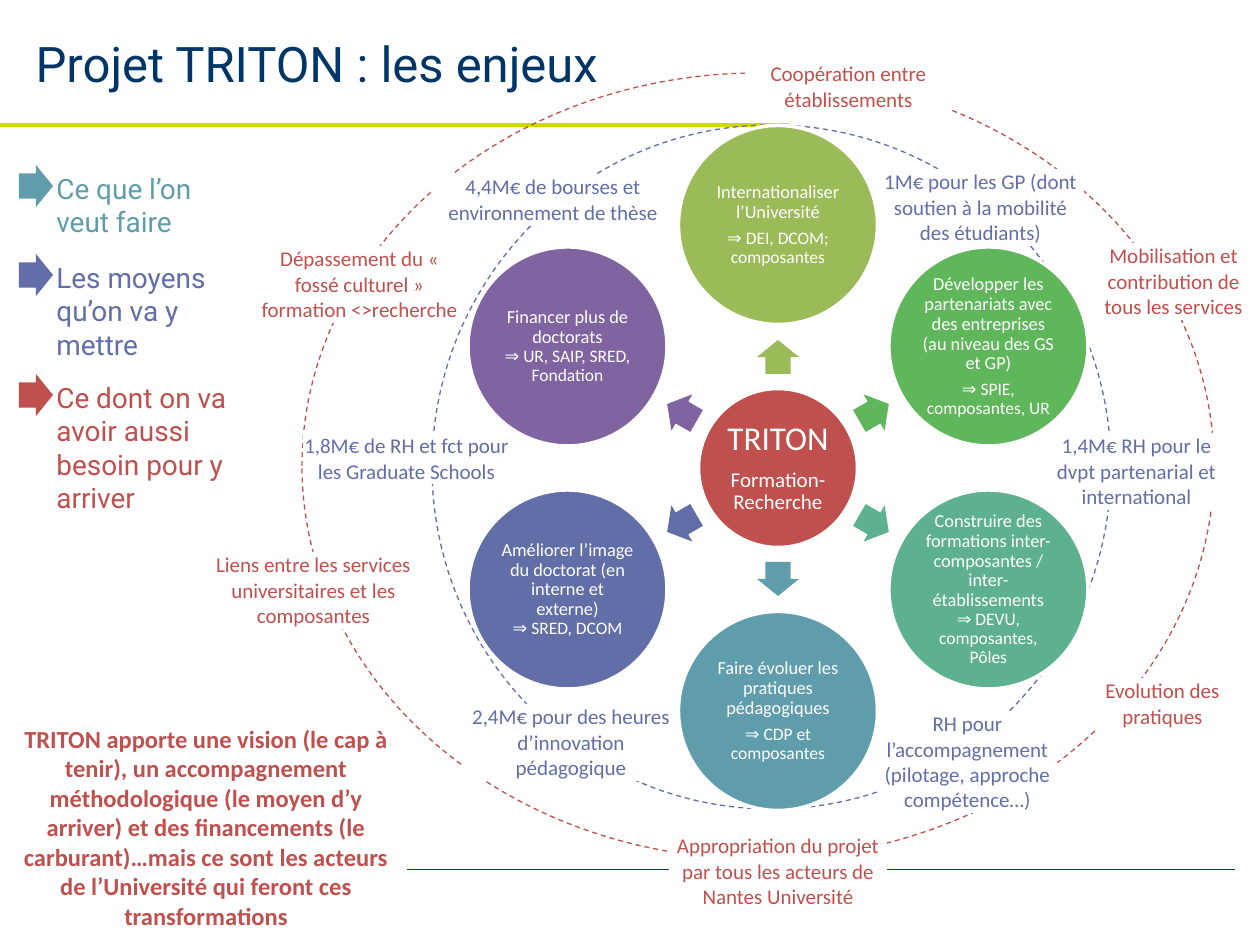
import math
import pptx
import pptx.util
import pptx.dml.color
import pptx.enum.dml
import pptx.enum.shapes
import pptx.enum.text
import pptx.oxml.ns
import pptx.oxml.xmlchemy

SHAPE = pptx.enum.shapes.MSO_SHAPE
ALIGN = pptx.enum.text.PP_ALIGN
ANCHOR = pptx.enum.text.MSO_ANCHOR

THEME = {
    "navy": "003667", "lime": "D0D700", "rule": "004080", "white": "FFFFFF",
    "teal": "5F9DAC", "blue": "626EA7", "red": "C0504D", "olive": "9BBB59",
    "green": "5FB65B", "mint": "5DB18E", "purple": "8064A2",
    "head": "Roboto", "body": "Calibri",
    "title": 28, "legend": 16, "message": 14, "label": 12,
    "hub": 19, "goal": 10.5, "owner": 10,
}

TITLE = "Projet TRITON : les enjeux"
LEGEND = [
    ("Ce que l’on veut faire", "teal", 165, 81),
    ("Les moyens qu’on va y mettre", "blue", 254, 115),
    ("Ce dont on va avoir aussi besoin pour y arriver", "red", 374, 149),
]
MESSAGE = ("TRITON apporte une vision (le cap à tenir), un accompagnement méthodologique "
           "(le moyen d’y arriver) et des financements (le carburant)…mais ce sont les acteurs "
           "de l’Université qui feront ces transformations")
HUB = ["TRITON", "Formation-Recherche"]
GOALS = [
    (["Internationaliser l’Université", "⇒ DEI, DCOM; composantes"], "olive"),
    (["Développer les partenariats avec des entreprises (au niveau des GS et GP)",
      "⇒ SPIE, composantes, UR"], "green"),
    (["Construire des formations inter-composantes / inter-établissements\v"
      "⇒ DEVU, composantes, Pôles"], "mint"),
    (["Faire évoluer les pratiques pédagogiques", "⇒ CDP et composantes"], "teal"),
    (["Améliorer l’image du doctorat (en interne et externe)\v⇒ SRED, DCOM"], "blue"),
    (["Financer plus de doctorats\v⇒ UR, SAIP, SRED, Fondation"], "purple"),
]
NEEDS = [
    ("Mobilisation et contribution de tous les services", 1096, 243, 155, 77),
    ("Appropriation du projet par tous les acteurs de Nantes Université", 669, 833, 218, 77),
    ("Coopération entre établissements", 745, 61, 207, 51),
    ("Evolution des pratiques", 1073, 678, 179, 51),
    ("Liens entre les services universitaires et les composantes", 210, 552, 207, 77),
    ("Dépassement du « fossé culturel » formation <>recherche", 256, 246, 207, 77),
]
MEANS = [
    ("2,4M€ pour des heures d’innovation pédagogique", 462, 704, 218, 77),
    ("1M€ pour les GP (dont soutien à la mobilité des étudiants)", 877, 169, 207, 77),
    ("1,4M€ RH pour le dvpt partenarial et international", 1047, 433, 179, 77),
    ("1,8M€ de RH et fct pour les Graduate Schools", 303, 433, 207, 51),
    ("4,4M€ de bourses et environnement de thèse", 431, 174, 244, 51),
    ("RH pour l’accompagnement (pilotage, approche compétence…)", 878, 711, 179, 102),
]
CENTER = (778, 468)
RING, ARROW_RING = 243, 111
HUB_SIZE, GOAL_SIZE = 159, 199
ARROW = (34, 42)


def px(n):
    return pptx.util.Emu(round(n * 914400 / 126))


def rgb(name):
    return pptx.dml.color.RGBColor.from_string(THEME[name])


def element(tag):
    return pptx.oxml.xmlchemy.OxmlElement(tag)


def set_font(r, size, color, face="body", bold=False):
    r.font.size = pptx.util.Pt(THEME[size])
    r.font.name = THEME[face]
    r.font.color.rgb = rgb(color)
    r.font.bold = bold


def setup_text(tf, margin, anchor=ANCHOR.TOP):
    tf.word_wrap = True
    tf.vertical_anchor = anchor
    tf.margin_left = tf.margin_right = tf.margin_top = tf.margin_bottom = px(margin)


def add_shape(s, kind, box, fill=None, line=None, width=0.75):
    sp = s.shapes.add_shape(kind, *map(px, box))
    sp.shadow.inherit = False
    if fill:
        sp.fill.solid()
        sp.fill.fore_color.rgb = rgb(fill)
    else:
        sp.fill.background()
    if line:
        sp.line.color.rgb = rgb(line)
        sp.line.width = pptx.util.Pt(width)
    else:
        sp.line.fill.background()
    return sp


def add_line(s, x1, x2, y, color, width):
    c = s.shapes.add_connector(pptx.enum.shapes.MSO_CONNECTOR.STRAIGHT, px(x1), px(y), px(x2), px(y))
    c.line.color.rgb = rgb(color)
    c.line.width = pptx.util.Pt(width)
    c._element.spPr.append(element("a:effectLst"))


def add_orbit(s, box, color):
    sp = add_shape(s, SHAPE.OVAL, box, line=color)
    sp.line.dash_style = pptx.enum.dml.MSO_LINE.DASH


def add_arrow(s, x, y, color, rotation=0):
    sp = add_shape(s, SHAPE.RIGHT_ARROW, (x, y, *ARROW), color)
    sp.adjustments[0], sp.adjustments[1] = 0.6, 0.5
    sp.rotation = rotation


def add_label(s, text, box, color, size="label", margin=0, bold=False):
    tf = add_shape(s, SHAPE.RECTANGLE, box, "white").text_frame
    setup_text(tf, margin)
    tf.text = text
    tf.paragraphs[0].alignment = ALIGN.CENTER
    set_font(tf.paragraphs[0].runs[0], size, color, bold=bold)


def add_circle(s, x, y, size, color, lines, sizes, margin):
    box = (x - size / 2, y - size / 2, size, size)
    tf = add_shape(s, SHAPE.OVAL, box, color, "white", 2).text_frame
    setup_text(tf, margin, ANCHOR.MIDDLE)
    tf.text = "\n".join(lines)
    for p in tf.paragraphs:
        p.alignment = ALIGN.CENTER
        p.line_spacing = 0.9
        for br in p._p.findall(pptx.oxml.ns.qn("a:br")):
            mark = element("a:rPr")
            mark.set("sz", str(int(THEME[sizes[0]] * 100)))
            br.append(mark)
    first = tf.paragraphs[0]
    first.space_after = pptx.util.Pt(0.35 * THEME[sizes[0]])
    runs = [r for p in tf.paragraphs for r in p.runs]
    for r, size_name in zip(runs, sizes):
        set_font(r, size_name, "white")


def add_legend(s, text, color, y, height):
    tf = s.shapes.add_textbox(px(44), px(y), px(198), px(height)).text_frame
    tf.word_wrap = True
    tf.text = text
    set_font(tf.paragraphs[0].runs[0], "legend", color, "head")
    add_arrow(s, 19, y, color)


def add_wheel(s):
    x, y = CENTER
    add_circle(s, x, y, HUB_SIZE, "red", HUB, ("hub", "label"), 3)
    for i, (lines, color) in enumerate(GOALS):
        angle = 60 * i - 90
        dx, dy = math.cos(math.radians(angle)), math.sin(math.radians(angle))
        add_arrow(s, x + ARROW_RING * dx - ARROW[0] / 2,
                  y + ARROW_RING * dy - ARROW[1] / 2, color, angle % 360)
        add_circle(s, x + RING * dx, y + RING * dy, GOAL_SIZE, color, lines, ("goal", "owner"), 1)


def main():
    prs = pptx.Presentation()
    prs.slide_width, prs.slide_height = px(1260), px(945)
    s = prs.slides.add_slide(prs.slide_layouts[5])
    title = s.shapes.title
    title.left, title.top, title.width, title.height = map(px, (23, 0, 1109, 125))
    tf = title.text_frame
    tf.text = TITLE
    tf.vertical_anchor = ANCHOR.MIDDLE
    tf.paragraphs[0].alignment = ALIGN.LEFT
    set_font(tf.paragraphs[0].runs[0], "title", "navy", "head")

    add_line(s, 25, 1235, 869, "rule", 0.5)
    add_line(s, 0, 789, 125, "lime", 2)
    add_orbit(s, (432, 125, 679, 684), "blue")
    for item in LEGEND:
        add_legend(s, *item)
    add_wheel(s)
    add_orbit(s, (302, 73, 912, 786), "red")
    for text, *box in NEEDS:
        add_label(s, text, box, "red")
    add_label(s, MESSAGE, (5, 718, 402, 221), "red", "message", 6, True)
    for text, *box in MEANS:
        add_label(s, text, box, "blue")
    prs.save("out.pptx")


if __name__ == "__main__":
    main()
